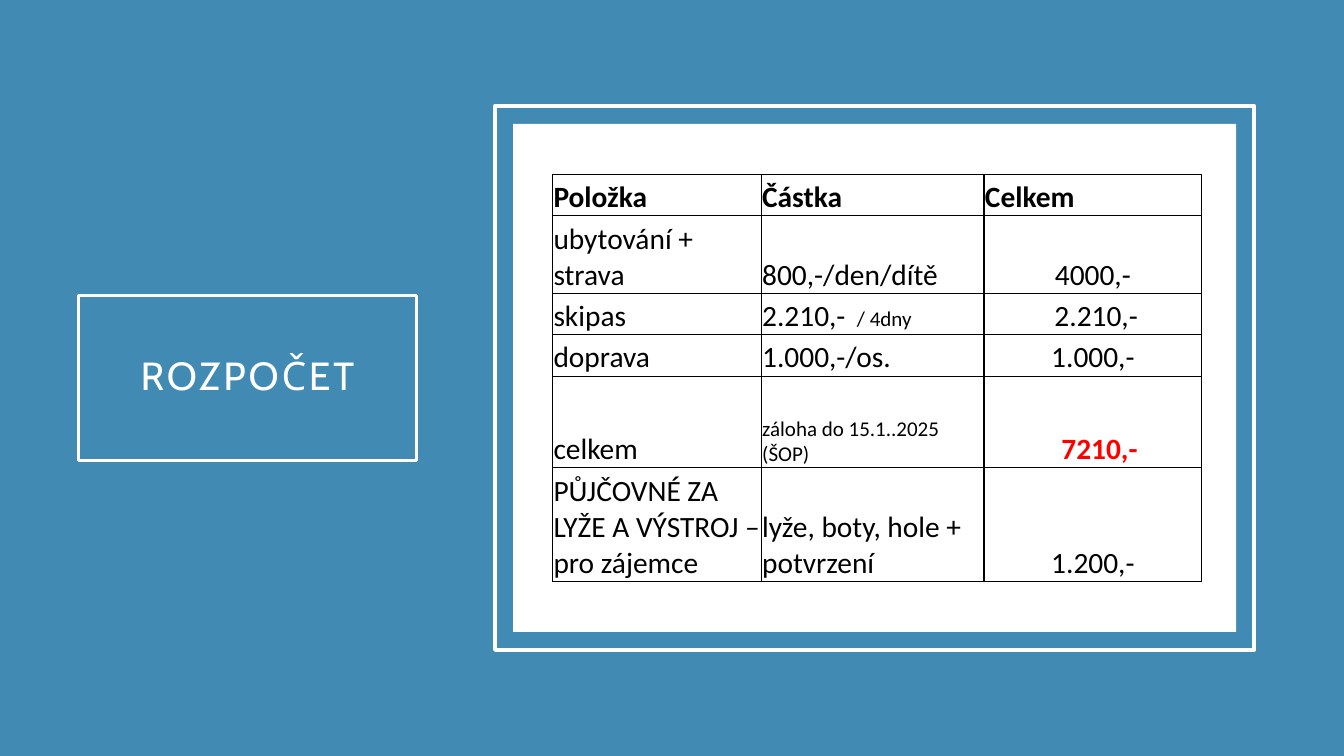
from lxml.etree import SubElement
from pptx import Presentation
from pptx.dml.color import RGBColor
from pptx.enum.shapes import MSO_SHAPE as Shape
from pptx.enum.text import MSO_ANCHOR as Anchor, PP_ALIGN as Align
from pptx.oxml.ns import qn
from pptx.util import Inches, Pt

BLUE, WHITE, BLACK, RED = "418AB3", "FFFFFF", "000000", "FF0000"
TITLE = "ROZPOČET"
TITLE_BOX = (0.78, 2.93, 3.35, 1.64)
FRAME_BOX = (4.91, 1.05, 7.53, 5.4)
FRAME_GAP = 0.18
TABLE_LEFT, TABLE_TOP = 5.48, 1.73
COLUMNS = [2.07, 2.21, 2.16]
ROWS = [0.41, 0.77, 0.41, 0.41, 0.91, 1.13]
RULES = [1, 1, 0.5, 0.5, 0.5, 0.5, 1]
LARGE, SMALL = 21, 15
BUDGET = [
    ["Položka", "Částka", "Celkem"],
    ["ubytování + strava", "800,-/den/dítě", "4000,-"],
    ["skipas", ("2.210,- ", " / 4dny"), " 2.210,-"],
    ["doprava", "1.000,-/os.", "1.000,-"],
    ["celkem", ("", "záloha do 15.1..2025 (ŠOP)"), "  7210,-"],
    ["PŮJČOVNÉ ZA LYŽE A VÝSTROJ – pro zájemce", "lyže, boty, hole + potvrzení", "1.200,-"],
]
TOTAL_CELL = (4, 2)


def color(value):
    return RGBColor.from_string(value)


def add_box(slide, box, fill=None, line=None):
    shape = slide.shapes.add_shape(Shape.RECTANGLE, *map(Inches, box))
    shape.shadow.inherit = False
    if fill:
        shape.fill.solid()
        shape.fill.fore_color.rgb = color(fill)
    else:
        shape.fill.background()
    if line:
        shape.line.color.rgb = color(line)
        shape.line.width = Pt(2.5)
    else:
        shape.line.fill.background()
    return shape


def style_run(run, font, size, ink, bold=False):
    run.font.name = font
    run.font.size = Pt(size)
    run.font.color.rgb = color(ink)
    run.font.bold = bold


def add_title(slide):
    shape = add_box(slide, TITLE_BOX, line=WHITE)
    frame = shape.text_frame
    frame.text = TITLE
    frame.word_wrap = True
    frame.vertical_anchor = Anchor.MIDDLE
    frame.margin_left = frame.margin_right = Inches(0.2)
    frame.margin_top = frame.margin_bottom = Inches(0.2)
    paragraph = frame.paragraphs[0]
    paragraph.alignment = Align.CENTER
    paragraph.line_spacing = 0.9
    run = paragraph.runs[0]
    style_run(run, "Cabin", 28, WHITE)
    run.font._element.set("spc", "200")


def set_borders(cell, top, bottom):
    properties = cell._tc.get_or_add_tcPr()
    widths = {"a:lnL": 1, "a:lnR": 1, "a:lnT": top, "a:lnB": bottom}
    for position, (tag, width) in enumerate(widths.items()):
        line = SubElement(properties, qn(tag), w=str(Pt(width)))
        properties.insert(position, line)
        fill = SubElement(line, qn("a:solidFill"))
        SubElement(fill, qn("a:srgbClr"), val=BLACK)


def fill_cell(cell, content, row, column):
    cell.fill.background()
    cell.vertical_anchor = Anchor.BOTTOM
    cell.margin_left = cell.margin_right = cell.margin_top = Inches(0.01)
    cell.margin_bottom = 0
    set_borders(cell, RULES[row], RULES[row + 1])
    paragraph = cell.text_frame.paragraphs[0]
    if row and column == 2:
        paragraph.alignment = Align.CENTER
    is_total = (row, column) == TOTAL_CELL
    parts = (content,) if isinstance(content, str) else content
    for text, size in zip(parts, (LARGE, SMALL)):
        if text:
            run = paragraph.add_run()
            run.text = text
            style_run(run, "Calibri", size, RED if is_total else BLACK, row == 0 or is_total)


def add_budget(slide):
    box = (TABLE_LEFT, TABLE_TOP, sum(COLUMNS), sum(ROWS))
    table = slide.shapes.add_table(len(ROWS), len(COLUMNS), *map(Inches, box)).table
    table.first_row = table.horz_banding = False
    for column, width in zip(table.columns, COLUMNS):
        column.width = Inches(width)
    for row, height in zip(table.rows, ROWS):
        row.height = Inches(height)
    for row, contents in enumerate(BUDGET):
        for column, content in enumerate(contents):
            fill_cell(table.cell(row, column), content, row, column)


def main():
    presentation = Presentation()
    presentation.slide_width = Inches(13.33)
    presentation.slide_height = Inches(7.5)
    slide = presentation.slides.add_slide(presentation.slide_layouts[6])
    slide.background.fill.solid()
    slide.background.fill.fore_color.rgb = color(BLUE)
    add_title(slide)
    add_box(slide, FRAME_BOX, line=WHITE)
    left, top, width, height = FRAME_BOX
    panel = (left + FRAME_GAP, top + FRAME_GAP, width - 2 * FRAME_GAP, height - 2 * FRAME_GAP)
    add_box(slide, panel, fill=WHITE)
    add_budget(slide)
    presentation.save("out.pptx")


if __name__ == "__main__":
    main()
